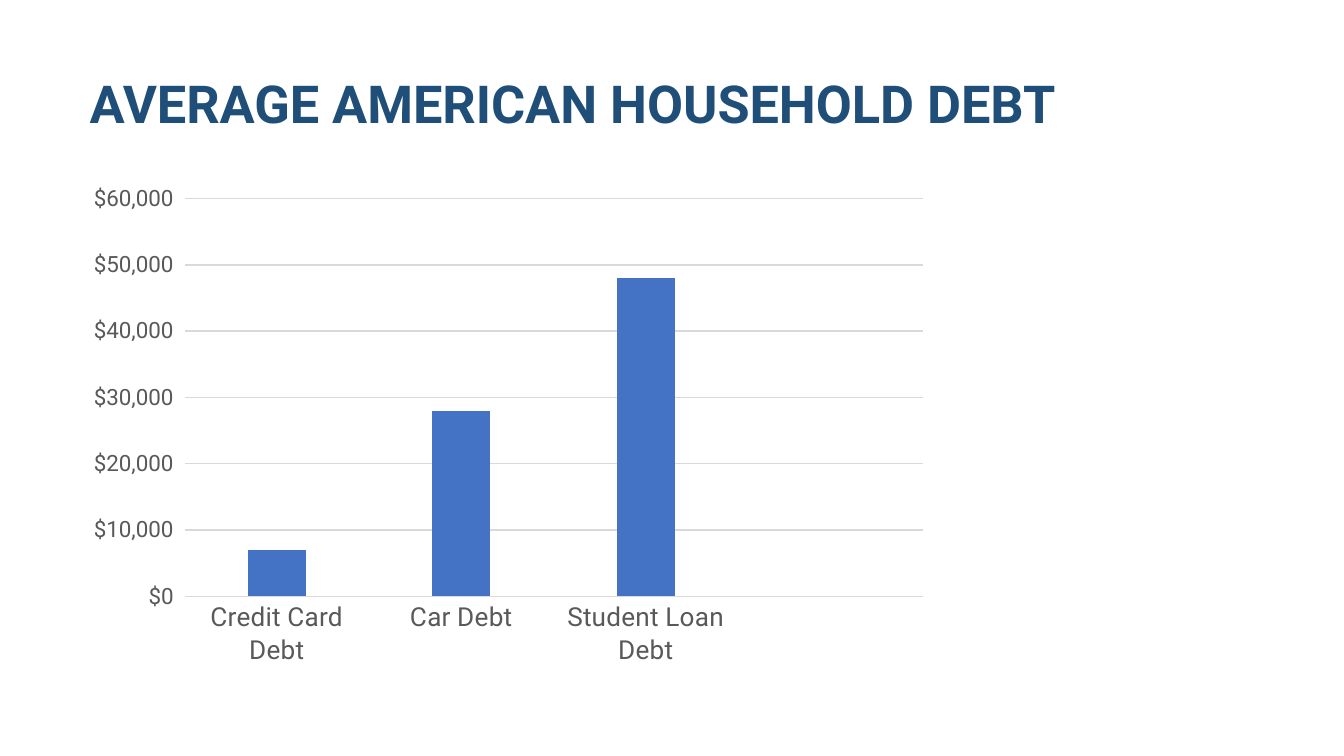
from pptx import Presentation
from pptx.chart.data import CategoryChartData
from pptx.dml.color import RGBColor
from pptx.enum.chart import XL_CHART_TYPE, XL_TICK_MARK
from pptx.oxml import parse_xml
from pptx.oxml.ns import nsdecls
from pptx.util import Pt

COLUMNS = XL_CHART_TYPE.COLUMN_CLUSTERED
NO_TICK = XL_TICK_MARK.NONE
NAVY = RGBColor(0x1F, 0x4E, 0x79)
BLUE = RGBColor(0x44, 0x72, 0xC4)
GRAY = RGBColor(0x59, 0x59, 0x59)
LIGHT_GRAY = RGBColor(0xD9, 0xD9, 0xD9)
BLACK = RGBColor(0, 0, 0)
LEFT = Pt(41)


def format_font(font, size, color, name="Roboto", bold=False):
    font.size = Pt(size)
    font.name = name
    font.bold = bold
    font.color.rgb = color


def add_text(slide, text, left, top, width, height, space_after=0, **font_format):
    frame = slide.shapes.add_textbox(left, top, width, height).text_frame
    frame.word_wrap = True
    paragraph = frame.paragraphs[0]
    paragraph.space_after = Pt(space_after)
    run = paragraph.add_run()
    run.text = text
    format_font(run.font, **font_format)


prs = Presentation()
prs.slide_width = Pt(720)
prs.slide_height = Pt(405)
slide = prs.slides.add_slide(prs.slide_layouts[6])

add_text(slide, "AVERAGE AMERICAN HOUSEHOLD DEBT", LEFT, Pt(34.5), Pt(620.5), Pt(41),
         space_after=18, size=28, color=NAVY, bold=True)

# The fourth category is blank and leaves an empty slot on the right
debts = CategoryChartData()
debts.categories = ["Credit Card Debt", "Car Debt", "Student Loan Debt", ""]
debts.add_series("Series 1", [7000, 28000, 48000, None])
chart = slide.shapes.add_chart(COLUMNS, LEFT, Pt(94.3), Pt(463), Pt(268.5), debts).chart
chart.has_legend = False
chart.has_title = False
format_font(chart.font, 10, BLACK, name="Arial")

plot = chart.plots[0]
plot.gap_width = 219
plot.overlap = -27
plot.vary_by_categories = False
bars = plot.series[0].format.fill
bars.solid()
bars.fore_color.rgb = BLUE

debt_axis = chart.category_axis
dollar_axis = chart.value_axis
for axis, size in ((debt_axis, 14), (dollar_axis, 12)):
    axis.major_tick_mark = NO_TICK
    axis.minor_tick_mark = NO_TICK
    format_font(axis.tick_labels.font, size, GRAY)

dollar_axis.minimum_scale = 0
dollar_axis.maximum_scale = 60000
dollar_axis.major_unit = 10000
dollar_axis.tick_labels.number_format = '"$"#,##0_);[Red]\\("$"#,##0\\)'
dollar_axis.tick_labels.number_format_is_linked = False
dollar_axis.format.line.fill.background()
for line in (debt_axis.format.line, dollar_axis.major_gridlines.format.line):
    line.color.rgb = LIGHT_GRAY
    line.width = Pt(0.75)

# Fixed plot area, as fractions of the chart
plot_area = chart.element.chart.plotArea
for layout in plot_area.xpath("c:layout"):
    plot_area.remove(layout)
fractions = {"x": 0.125, "y": 0.045, "w": 0.854, "h": 0.794}
modes = "".join(f'<c:{side}Mode val="edge"/>' for side in "xy")
places = "".join(f'<c:{side} val="{value}"/>' for side, value in fractions.items())
plot_area.insert(0, parse_xml(
    f'<c:layout {nsdecls("c")}><c:manualLayout><c:layoutTarget val="inner"/>'
    f"{modes}{places}</c:manualLayout></c:layout>"))

prs.save("out.pptx")
